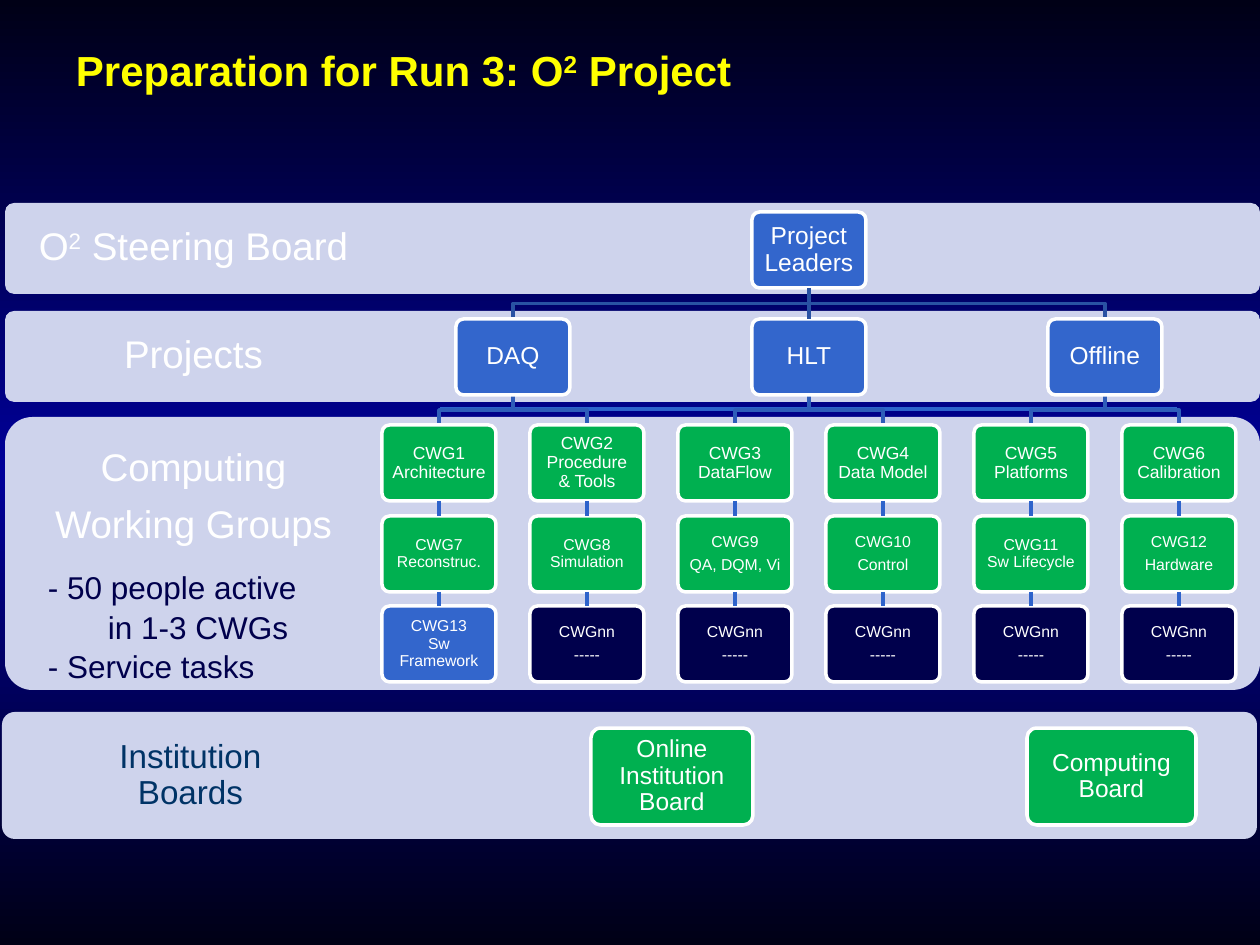
from copy import deepcopy

from lxml.etree import SubElement
from pptx import Presentation
from pptx.dml.color import RGBColor
from pptx.enum.shapes import MSO_CONNECTOR, MSO_SHAPE
from pptx.enum.text import MSO_ANCHOR as ANCHOR, PP_ALIGN as ALIGN
from pptx.oxml.ns import qn
from pptx.util import Pt

EMU_PER_PX = 914400 / 126
EDGE = RGBColor(0x00, 0x00, 0x16)
MIDDLE = RGBColor(0x00, 0x00, 0x99)
YELLOW = RGBColor(0xFF, 0xFF, 0x00)
WHITE = RGBColor(0xFF, 0xFF, 0xFF)
BAND = RGBColor(0xCE, 0xD3, 0xEC)
BLUE = RGBColor(0x33, 0x66, 0xCC)
GREEN = RGBColor(0x00, 0xB0, 0x50)
NAVY = RGBColor(0x00, 0x00, 0x4C)
TEAL = RGBColor(0x00, 0x33, 0x66)
LINK = RGBColor(0x2E, 0x63, 0xCB)
UPPER_LINK = RGBColor(0x29, 0x52, 0xA3)
LOWER_LINK = RGBColor(0x2E, 0x5D, 0xB9)

BOX_W, BOX_H = 114, 76
GRID_X, COLUMN_STEP = 382, 148
ROW_TOPS = (425, 516, 606)
LEADER_TOP, PROJECT_TOP = 212, 319
PROJECTS = ("DAQ", "HLT", "Offline")
EMPTY_GROUP = ("CWGnn", "-----")
GROUPS = (
    (("CWG1 Architecture",), ("CWG2 Procedure & Tools",), ("CWG3 DataFlow",),
     ("CWG4\nData Model",), ("CWG5 Platforms",), ("CWG6 Calibration",)),
    (("CWG7 Reconstruc.",), ("CWG8\nSimulation",), ("CWG9", "QA, DQM, Vi"),
     ("CWG10", "Control"), ("CWG11\nSw Lifecycle",), ("CWG12", "Hardware")),
    (("CWG13\nSw Framework",),) + (EMPTY_GROUP,) * 5,
)


def px(n):
    return round(n * EMU_PER_PX)


def set_background(s):
    fill = s.background.fill
    fill.gradient()
    fill.gradient_angle = 270
    for stop in fill.gradient_stops:
        stop.color.rgb = EDGE
    first = s.background._cSld.find(".//" + qn("a:gs"))
    first.addnext(deepcopy(first))
    for stop, position in zip(fill.gradient_stops, (0, 0.5, 1)):
        stop.position = position
    fill.gradient_stops[1].color.rgb = MIDDLE


def write(tf, paragraphs, size, color=WHITE, bold=False, align=ALIGN.CENTER,
          anchor=ANCHOR.MIDDLE, inset=(7, 7), spacing=0.9, after=0.4, wrap=True):
    tf.word_wrap = wrap
    tf.vertical_anchor = anchor
    tf.margin_left = tf.margin_right = px(inset[0])
    tf.margin_top = tf.margin_bottom = px(inset[1])
    for i, text in enumerate(paragraphs):
        p = tf.paragraphs[0] if i == 0 else tf.add_paragraph()
        p.alignment = align
        p.line_spacing = spacing
        p.space_after = Pt(round(size * after, 1))
        for n, line in enumerate(text.split("\n")):
            if n:
                p.add_line_break()
            for k, part in enumerate(line.split("^")):
                r = p.add_run()
                r.text = part
                r.font.name = "Arial"
                r.font.size = Pt(size)
                r.font.bold = bold
                r.font.color.rgb = color
                if k % 2:
                    r._r.get_or_add_rPr().set("baseline", "30000")


def add_text(s, x, y, w, h, paragraphs, size, **fmt):
    tf = s.shapes.add_textbox(px(x), px(y), px(w), px(h)).text_frame
    write(tf, paragraphs, size, **fmt)
    return tf


def add_panel(s, x, y, w, h, color):
    sp = s.shapes.add_shape(MSO_SHAPE.ROUNDED_RECTANGLE, px(x), px(y), px(w), px(h))
    sp.adjustments[0] = 0.1
    sp.shadow.inherit = False
    sp.fill.solid()
    sp.fill.fore_color.rgb = color
    sp.line.fill.background()
    return sp


def add_box(s, x, y, paragraphs, size, color, w=BOX_W, h=BOX_H):
    sp = add_panel(s, x, y, w, h, color)
    sp.line.color.rgb = WHITE
    sp.line.width = Pt(2)
    write(sp.text_frame, paragraphs, size)
    return sp


def add_line(s, x1, y1, x2, y2, color=LINK, width=2.25):
    line = s.shapes.add_connector(MSO_CONNECTOR.STRAIGHT, px(x1), px(y1), px(x2), px(y2))
    line.line.color.rgb = color
    line.line.width = Pt(width)
    SubElement(line._element.spPr, qn("a:effectLst"))
    return line


def join(s, upper, lower, **fmt):
    line = add_line(s, 0, 0, 0, 0, **fmt)
    line.begin_connect(upper, 2)
    line.end_connect(lower, 0)


def add_elbow(s, x1, y1, x2, y2, color):
    middle = (y1 + y2) / 2
    builder = s.shapes.build_freeform(px(x1), px(y1))
    points = [(px(x), px(y)) for x, y in ((x1, middle), (x2, middle), (x2, y2))]
    builder.add_line_segments(points, close=False)
    sp = builder.convert_to_shape()
    sp.shadow.inherit = False
    sp.fill.background()
    sp.line.color.rgb = color
    sp.line.width = Pt(2)


def add_bands(s):
    for x, y, h in ((2, 712, 127), (5, 417, 273), (5, 311, 91), (5, 203, 91)):
        add_panel(s, x, y, 1255, h, BAND)
    add_text(s, 5, 203, 377, 91, ["O^2^ Steering Board"], 22)
    add_text(s, 5, 311, 377, 91, ["Projects"], 22)
    add_text(s, 5, 435, 377, 125, ["Computing", "Working Groups"], 22)
    add_text(s, 2, 712, 377, 127, ["Institution\nBoards"], 19, color=TEAL)
    tf = add_text(s, 35, 562, 276, 127,
                  ["- 50 people active", "in 1-3 CWGs", "- Service tasks"], 18,
                  color=NAVY, align=ALIGN.LEFT, anchor=ANCHOR.TOP, inset=(13, 6),
                  spacing=1, after=0.06, wrap=False)
    tf.paragraphs[1]._p.get_or_add_pPr().set("marL", str(px(60)))


def add_organisation(s):
    columns = [GRID_X + COLUMN_STEP * i for i in range(6)]
    projects = [(columns[i] + columns[i + 1]) // 2 for i in (0, 2, 4)]
    half = BOX_W // 2
    leader_x = projects[1]
    for x in (projects[0], projects[2]):
        add_elbow(s, leader_x + half, LEADER_TOP + BOX_H, x + half, PROJECT_TOP, UPPER_LINK)
    for i, x in enumerate(columns):
        add_elbow(s, projects[i // 2] + half, PROJECT_TOP + BOX_H,
                  x + half, ROW_TOPS[0], LOWER_LINK)
    leader = add_box(s, leader_x, LEADER_TOP, ["Project\nLeaders"], 14, BLUE)
    boxes = [add_box(s, x, PROJECT_TOP, [name], 14, BLUE)
             for x, name in zip(projects, PROJECTS)]
    join(s, leader, boxes[1], color=UPPER_LINK, width=2)

    above = []
    for row, (y, groups) in enumerate(zip(ROW_TOPS, GROUPS)):
        current = []
        for x, text in zip(columns, groups):
            color = NAVY if text == EMPTY_GROUP else GREEN
            if text[0].startswith("CWG13"):
                color = BLUE
            current.append(add_box(s, x, y, text, 9 if row else 10, color))
        for upper, lower in zip(above, current):
            join(s, upper, lower)
        above = current


def main():
    prs = Presentation()
    prs.slide_width, prs.slide_height = px(1260), px(945)
    s = prs.slides.add_slide(prs.slide_layouts[6])
    set_background(s)
    add_text(s, 63, 38, 1134, 157, ["Preparation for Run 3: O^2^ Project"], 24,
             color=YELLOW, bold=True, align=ALIGN.LEFT, anchor=ANCHOR.TOP,
             inset=(13, 6), spacing=1, after=0)
    add_line(s, 440, 409, 1177, 409)
    add_bands(s)
    add_organisation(s)
    add_box(s, 591, 728, ["Online\nInstitution Board"], 14, GREEN, w=162, h=97)
    add_box(s, 1027, 728, ["Computing\nBoard"], 14, GREEN, w=169, h=97)
    prs.save("out.pptx")


if __name__ == "__main__":
    main()
